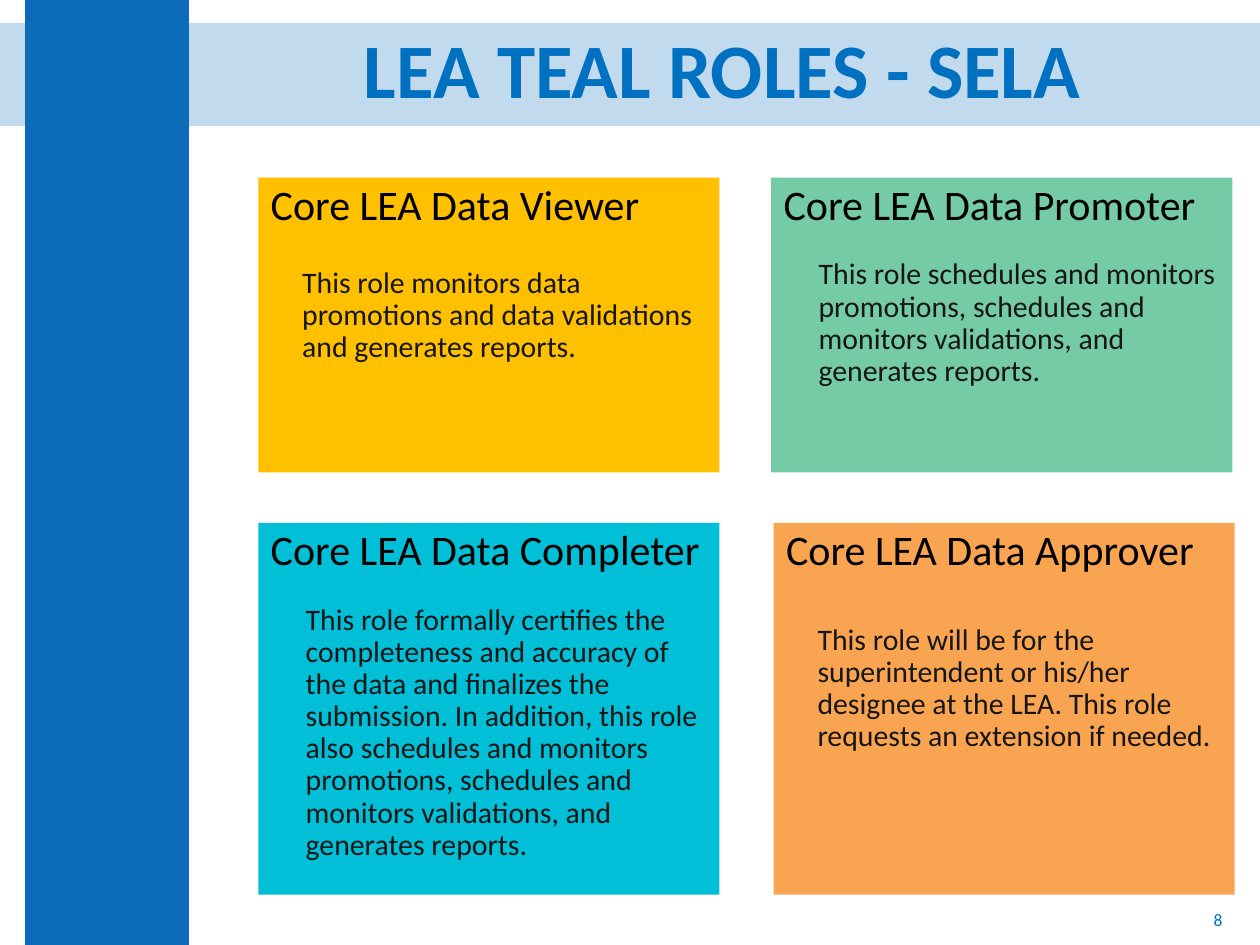
from lxml.etree import SubElement
from pptx import Presentation
from pptx.dml.color import RGBColor
from pptx.enum.shapes import MSO_SHAPE
from pptx.enum.text import MSO_ANCHOR, MSO_AUTO_SIZE, PP_ALIGN
from pptx.oxml.ns import qn
from pptx.util import Pt

COLORS = {
    "brand": "0D6CB9", "accent": "0070C0", "heading": "000000", "body": "161616",
    "yellow": "FFC000", "green": "75CBA6", "cyan": "00BFD7", "orange": "F9A451",
}
FONT = "Calibri"
TITLE = "LEA TEAL ROLES - SELA"
PAGE = "8"

# Row by row: heading, description, fill, left, indent, gap above description
ROLES = [
    [("Core LEA Data Viewer",
      "This role monitors data promotions and data validations and generates reports.",
      "yellow", 147.6, 18, 22.2),
     ("Core LEA Data Promoter",
      "This role schedules and monitors promotions, schedules and monitors "
      "validations, and generates reports.",
      "green", 440.7, 20, 17.2)],
    [("Core LEA Data Completer",
      "This role formally certifies the completeness and accuracy of the data and "
      "finalizes the submission. In addition, this role also schedules and monitors "
      "promotions, schedules and monitors validations, and generates reports.",
      "cyan", 147.6, 20, 17.2),
     ("Core LEA Data Approver",
      "This role will be for the superintendent or his/her designee at the LEA. "
      "This role requests an extension if needed.",
      "orange", 442.1, 18, 28.6)],
]
ROWS = [(101.5, 168.5), (298.8, 212.4)]  # top, height
CARD_W = 263.5


def add_rect(shapes, left, top, width, height, color, alpha=None):
    sp = shapes.add_shape(MSO_SHAPE.RECTANGLE, Pt(left), Pt(top), Pt(width), Pt(height))
    sp.shadow.inherit = False
    sp.fill.solid()
    sp.fill.fore_color.rgb = RGBColor.from_string(COLORS[color])
    sp.line.fill.background()
    if alpha is not None:
        clr = sp._element.spPr.find(qn("a:solidFill"))[0]
        SubElement(clr, qn("a:alpha")).set("val", str(alpha * 1000))
    return sp


def write(p, text, size, color, bold=False, align=PP_ALIGN.LEFT, spacing=0.9,
          before=0, indent=0):
    p.alignment = align
    p.line_spacing = spacing
    p.space_before = Pt(before)
    pPr = p._p.get_or_add_pPr()
    pPr.set("marL", str(Pt(indent)))
    pPr.set("indent", "0")
    r = p.add_run()
    r.text = text
    r.font.name = FONT
    r.font.size = Pt(size)
    r.font.bold = bold
    r.font.color.rgb = RGBColor.from_string(COLORS[color])


def set_frame(sp, anchor):
    tf = sp.text_frame
    tf.word_wrap = True
    tf.auto_size = MSO_AUTO_SIZE.NONE
    tf.vertical_anchor = anchor
    return tf


def main():
    prs = Presentation()
    prs.slide_width, prs.slide_height = Pt(720), Pt(540)
    slide = prs.slides.add_slide(prs.slide_layouts[5])
    shapes = slide.shapes

    add_rect(shapes, 0, 13, 720, 59, "brand", alpha=25)
    add_rect(shapes, 14.4, 0, 93.6, 540, "brand")

    title = shapes.title
    shapes._spTree.append(title._element)  # bring in front of the band
    title.left, title.top, title.width, title.height = Pt(105.8), Pt(19.4), Pt(614.2), Pt(45.4)
    tf = set_frame(title, MSO_ANCHOR.MIDDLE)
    write(tf.paragraphs[0], TITLE, 44, "accent", bold=True, align=PP_ALIGN.CENTER)

    for (top, height), row in zip(ROWS, ROLES):
        for heading, text, color, left, indent, gap in row:
            card = add_rect(shapes, left, top, CARD_W, height, color)
            tf = set_frame(card, MSO_ANCHOR.TOP)
            write(tf.paragraphs[0], heading, 24, "heading")
            write(tf.add_paragraph(), text, 17, "body", before=gap, indent=indent)

    number = shapes.add_textbox(Pt(543.6), Pt(511.2), Pt(162), Pt(28.8))
    tf = set_frame(number, MSO_ANCHOR.MIDDLE)
    write(tf.paragraphs[0], PAGE, 10, "accent", align=PP_ALIGN.RIGHT, spacing=1.0)

    prs.save("out.pptx")


if __name__ == "__main__":
    main()
